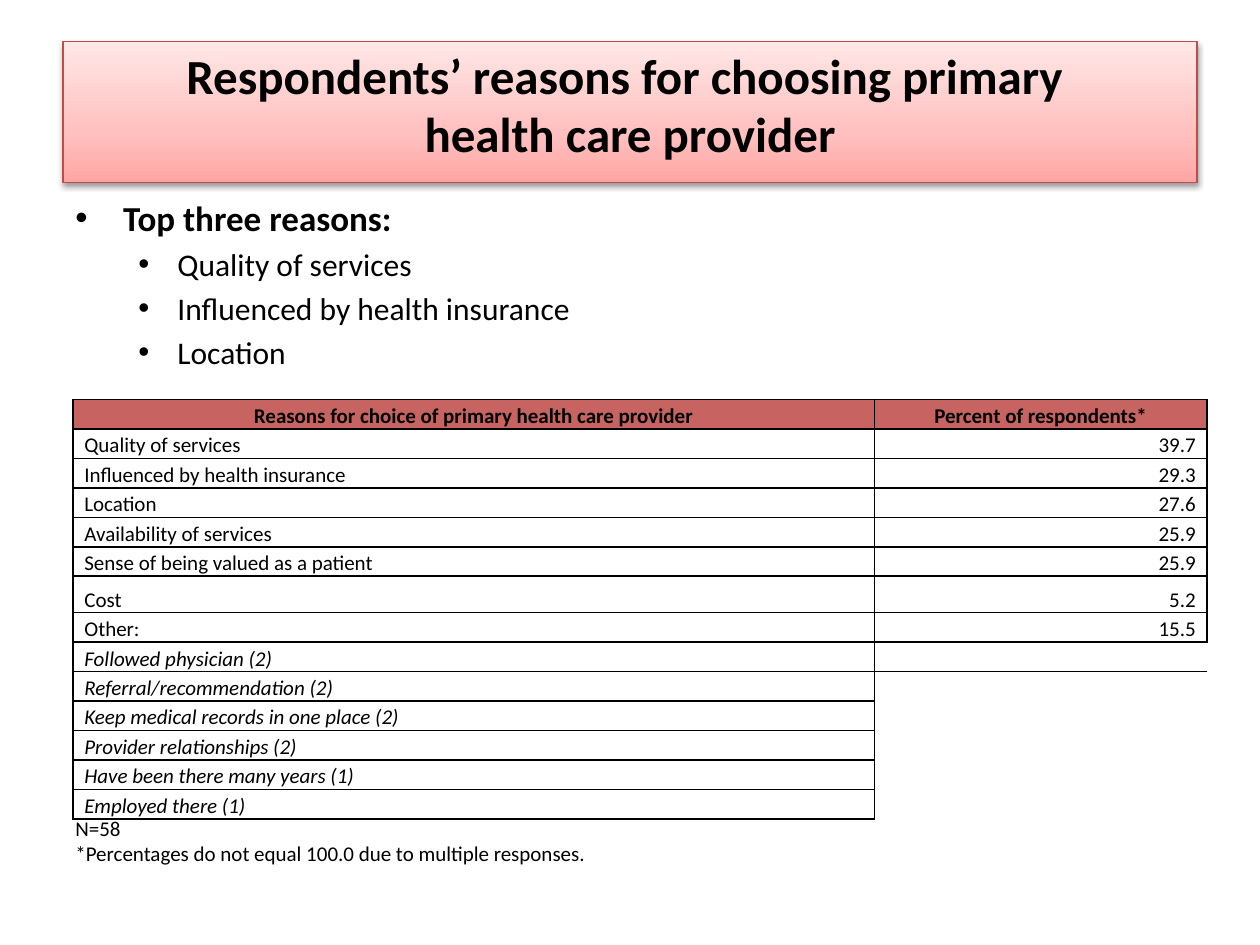
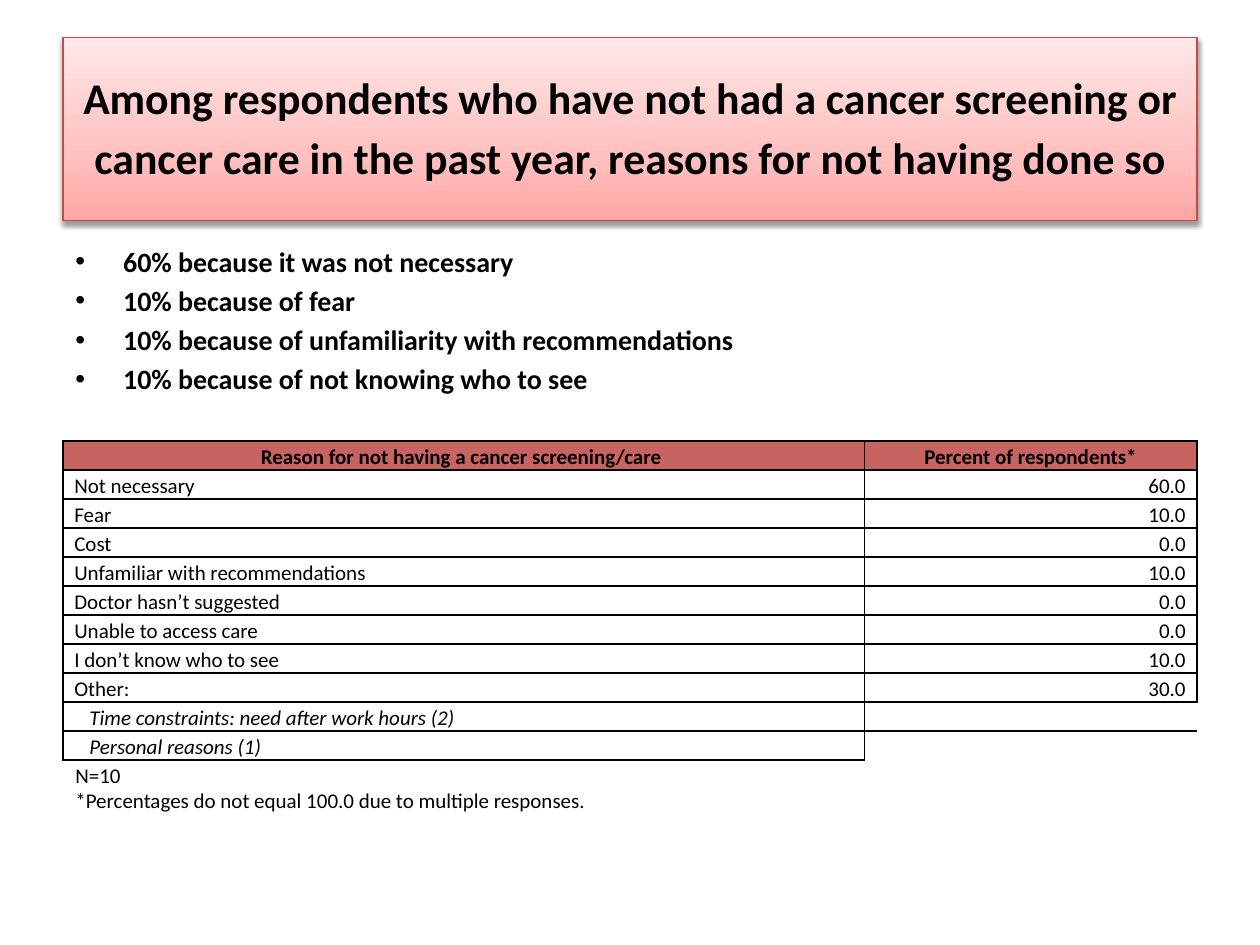
from lxml import etree
from pptx import Presentation, util as u
from pptx.dml.color import RGBColor
from pptx.enum import shapes, text as t
from pptx.oxml import parse_xml
from pptx.oxml.ns import nsdecls, qn

PX = 9144  # EMU in one px, 100 px to the inch
FONT = "Calibri"
BLACK = RGBColor(0, 0, 0)
EDGE = RGBColor(0xBF, 0x4C, 0x48)
HEAD = RGBColor(0xC7, 0x63, 0x61)
STOPS = ((0, "FFA6A5"), (35, "FFC0BF"), (100, "FFE7E7"))
PLAIN = "{2D5ABB26-0587-4C30-8999-92F81FD0307C}"
LEFT, MID, RIGHT = t.PP_ALIGN.LEFT, t.PP_ALIGN.CENTER, t.PP_ALIGN.RIGHT
EDGES = {"L": "a:lnL", "R": "a:lnR", "T": "a:lnT", "B": "a:lnB"}


def px(*nums):
    return [u.Emu(num * PX) for num in nums]


def write(par, words, size=12, bold=False, italic=False, align=LEFT,
          lead=None, before=0, left=0, hang=0, mark=None):
    """Fill one paragraph; a vertical tab in words breaks the line."""
    par.text = words
    par.alignment = align
    par.line_spacing = lead
    par.space_before = u.Pt(before)
    for run in par.runs:
        font = run.font
        font.name, font.size = FONT, u.Pt(size)
        font.bold, font.italic = bold, italic
        font.color.rgb = BLACK
    for gap in par._p.findall(qn("a:br")):
        etree.SubElement(gap, qn("a:rPr")).set("sz", str(size * 100))
    if not words:
        par._p.get_or_add_endParaRPr().set("sz", str(size * 100))
    props = par._p.get_or_add_pPr()
    props.set("marL", str(left * PX))
    props.set("indent", str(-hang * PX))
    if mark:
        etree.SubElement(props, qn("a:buFont")).set("typeface", "Arial")
        etree.SubElement(props, qn("a:buChar")).set("char", mark)


def border(cell, sides):
    props = cell._tc.get_or_add_tcPr()
    for spot, side in enumerate(sides):
        props.insert(spot, parse_xml(
            f'<{EDGES[side]} {nsdecls("a")} w="12700"><a:solidFill>'
            f'<a:srgbClr val="{BLACK}"/></a:solidFill></{EDGES[side]}>'))


class Deck:
    def __init__(self):
        self.prs = Presentation()
        self.prs.slide_width, self.prs.slide_height = px(1000, 750)
        self.slide = None

    def page(self):
        self.slide = self.prs.slides.add_slide(self.prs.slide_layouts[6])

    def title(self, words, top, high, size, foot, lead=None):
        """Draw the shaded band; foot is the space kept below its text."""
        band = self.slide.shapes.add_shape(
            shapes.MSO_SHAPE.RECTANGLE, *px(50, top, 900, high))
        band.fill.gradient()
        band.fill.gradient_angle = 90
        stops = band._element.spPr.find(".//" + qn("a:gsLst"))
        for old in list(stops):
            stops.remove(old)
        for pos, tint in STOPS:
            stop = etree.SubElement(stops, qn("a:gs"), pos=str(pos * 1000))
            etree.SubElement(stop, qn("a:srgbClr"), val=tint)
        band.line.color.rgb, band.line.width = EDGE, u.Pt(0.75)
        band.shadow.inherit = False
        band._element.spPr.find(qn("a:effectLst")).append(parse_xml(
            f'<a:outerShdw {nsdecls("a")} blurRad="40000" dist="20000" '
            f'dir="5400000" rotWithShape="0"><a:srgbClr val="{BLACK}">'
            '<a:alpha val="38000"/></a:srgbClr></a:outerShdw>'))
        frame = band.text_frame
        frame.word_wrap = True
        frame.vertical_anchor = t.MSO_ANCHOR.MIDDLE
        frame.margin_top, frame.margin_bottom = px(5, foot)
        write(frame.paragraphs[0], words, size=size, bold=True, align=MID,
              lead=lead)

    def box(self, left, top, wide, high):
        frame = self.slide.shapes.add_textbox(
            *px(left, top, wide, high)).text_frame
        frame.word_wrap = True
        return frame

    def points(self, items, top, high, size):
        """List (level, words) pairs as bullets."""
        frame = self.box(50, top, 883, high)
        for row, (level, words) in enumerate(items):
            par = frame.add_paragraph() if row else frame.paragraphs[0]
            pts = size - 2 * level
            write(par, words, size=pts, bold=level == 0, mark="•",
                  before=pts / 5 if row else 0,
                  left=(38, 81)[level], hang=(38, 31)[level])

    def table(self, head, rows, extra, left, top, inset=0, tall=None):
        """Draw head, rows of two cells, then extra in the first column."""
        lines = [head, *rows, *((words, "") for words in extra)]
        start = 1 + len(rows)
        shape = self.slide.shapes.add_table(
            len(lines), 2, *px(left, top, 900, 23 * len(lines)))
        grid = shape.table
        grid.first_row = grid.horz_banding = False
        grid._tbl.tblPr.find(qn("a:tableStyleId")).text = PLAIN
        grid.columns[0].width, grid.columns[1].width = px(636, 264)
        for row, line in enumerate(lines):
            grid.rows[row].height = px(29 if row == tall else 23)[0]
            for col, words in enumerate(line):
                cell = grid.cell(row, col)
                cell.margin_left, cell.margin_right = px(9, 9)
                cell.margin_top = cell.margin_bottom = 0
                cell.vertical_anchor = t.MSO_ANCHOR.BOTTOM
                if row == 0:
                    cell.fill.solid()
                    cell.fill.fore_color.rgb = HEAD
                else:
                    cell.fill.background()
                late = row >= start
                write(cell.text_frame.paragraphs[0], words, bold=row == 0,
                      italic=late, lead=1.15, left=inset if late else 0,
                      align=MID if row == 0 else (LEFT, RIGHT)[col])
                border(cell, "LRTB" if words else
                       "LT" if row == start else "L")

    def note(self, count, top):
        frame = self.box(50, top, 600, 50)
        write(frame.paragraphs[0], f"N={count}\v*Percentages do not equal "
              "100.0 due to multiple responses.")


def choice(deck):
    deck.page()
    deck.title("Respondents’ reasons for choosing primary \v"
               "health care provider", 33, 112, 28, 18)
    deck.table(
        ("Reasons for choice of primary health care provider",
         "Percent of respondents*"),
        [("Quality of services", "39.7"),
         ("Influenced by health insurance", "29.3"),
         ("Location", "27.6"),
         ("Availability of services", "25.9"),
         ("Sense of being valued as a patient", "25.9"),
         ("Cost", "5.2"),
         ("Other:", "15.5")],
        ["Followed physician (2)", "Referral/recommendation (2)",
         "Keep medical records in one place (2)",
         "Provider relationships (2)", "Have been there many years (1)",
         "Employed there (1)"],
        58, 317, tall=6)
    deck.points([(0, "Top three reasons:"), (1, "Quality of services"),
                 (1, "Influenced by health insurance"), (1, "Location")],
                151, 157, 20)
    deck.note(58, 642)


def screening(deck):
    deck.page()
    deck.title("Among respondents who have not had a cancer screening or "
               "cancer care in the past year, reasons for not having done so",
               30, 145, 25, 15, lead=1.15)
    deck.table(
        ("Reason for not having a cancer screening/care ",
         "Percent of respondents*"),
        [("Not necessary", "60.0"),
         ("Fear", "10.0"),
         ("Cost", "0.0"),
         ("Unfamiliar with recommendations", "10.0"),
         ("Doctor hasn’t suggested", "0.0"),
         ("Unable to access care", "0.0"),
         ("I don’t know who to see", "10.0"),
         ("Other:", "30.0")],
        ["Time constraints: need after work hours (2)",
         "Personal reasons (1)"],
        50, 350, inset=12)
    deck.points([(0, "60% because it was not necessary"),
                 (0, "10% because of fear"),
                 (0, "10% because of unfamiliarity with recommendations"),
                 (0, "10% because of not knowing who to see")],
                189, 152, 16)
    deck.note(10, 600)


def main():
    deck = Deck()
    choice(deck)
    screening(deck)
    deck.prs.save("out.pptx")


if __name__ == "__main__":
    main()
